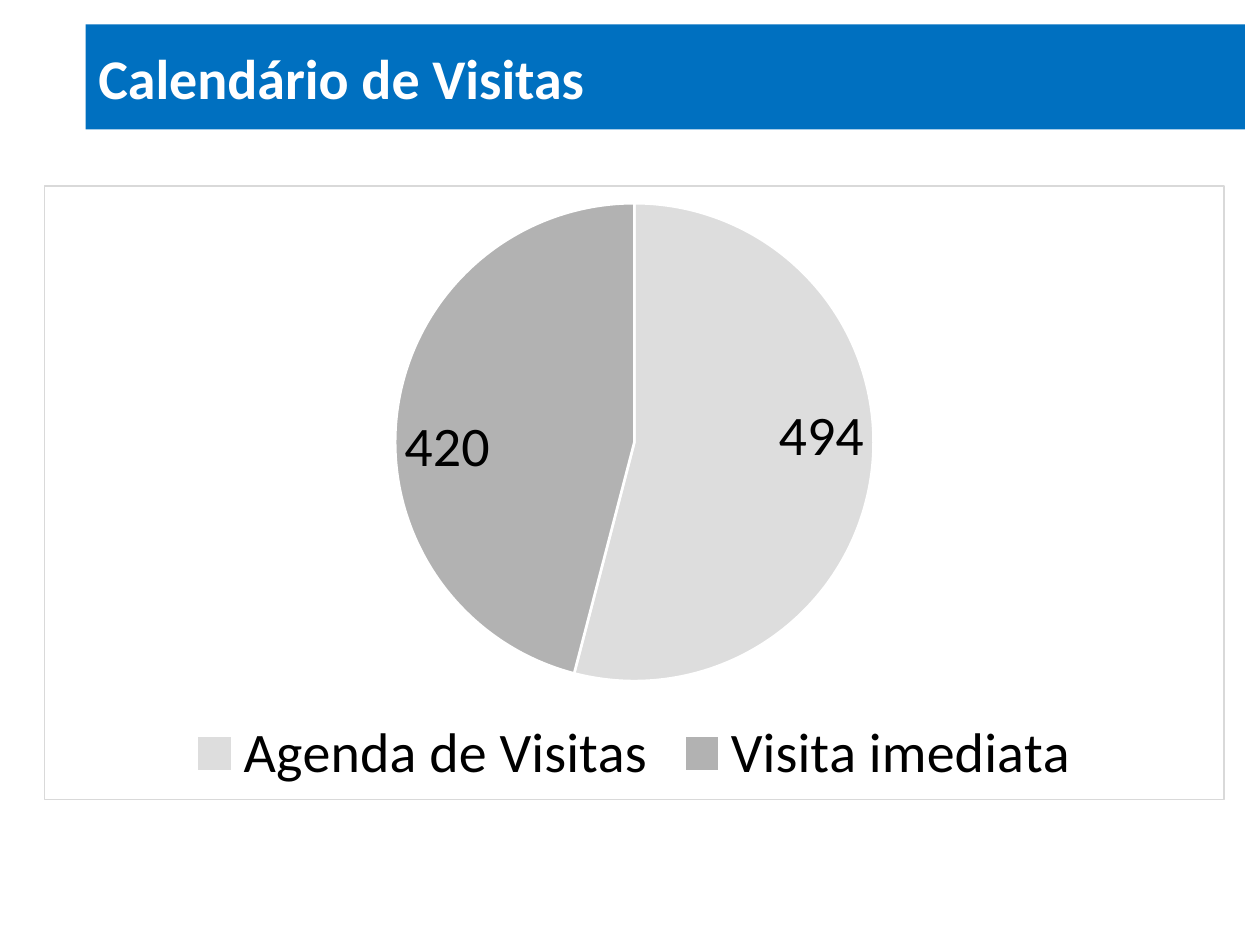
from lxml import etree
from pptx import Presentation
from pptx.chart.data import CategoryChartData
from pptx.dml.color import RGBColor
from pptx.enum.chart import XL_CHART_TYPE, XL_LABEL_POSITION, XL_LEGEND_POSITION
from pptx.enum.text import MSO_ANCHOR, MSO_AUTO_SIZE, PP_ALIGN
from pptx.oxml import parse_xml
from pptx.oxml.ns import nsdecls, qn
from pptx.util import Inches, Pt

PIE = XL_CHART_TYPE.PIE
INSIDE_END = XL_LABEL_POSITION.INSIDE_END
BOTTOM = XL_LEGEND_POSITION.BOTTOM
MIDDLE = MSO_ANCHOR.MIDDLE
GROW = MSO_AUTO_SIZE.SHAPE_TO_FIT_TEXT
LEFT = PP_ALIGN.LEFT

FONT = "Calibri"
SIZE = Pt(32)
TITLE_ONLY = 5
COLORS = {
    "banner": "0070C0",
    "white": "FFFFFF",
    "text": "000000",
    "frame": "D9D9D9",
    "scheduled": "DDDDDD",
    "immediate": "B2B2B2",
}
VISITS = [
    ("Agenda de Visitas", 494, "scheduled"),
    ("Visita imediata", 420, "immediate"),
]


def color(name):
    return RGBColor.from_string(COLORS[name])


def style_font(font, color_name, bold=False):
    font.name = FONT
    font.size = SIZE
    font.bold = bold
    font.color.rgb = color(color_name)


def add_banner(page, text, left, top, width, height):
    banner = page.shapes.title
    banner.left, banner.top = Inches(left), Inches(top)
    banner.width, banner.height = Inches(width), Inches(height)
    banner.fill.solid()
    banner.fill.fore_color.rgb = color("banner")
    frame = banner.text_frame
    frame.text = text
    frame.auto_size = GROW
    frame.vertical_anchor = MIDDLE
    para = frame.paragraphs[0]
    para.alignment = LEFT
    style_font(para.runs[0].font, "white", bold=True)


def frame_chart(chart):
    properties = parse_xml(f"<c:spPr {nsdecls('c', 'a')}/>")
    fill = etree.SubElement(properties, qn("a:solidFill"))
    etree.SubElement(fill, qn("a:srgbClr"), val=COLORS["white"])
    line = etree.SubElement(properties, qn("a:ln"), w=str(Pt(0.75)))
    line_fill = etree.SubElement(line, qn("a:solidFill"))
    etree.SubElement(line_fill, qn("a:srgbClr"), val=COLORS["frame"])
    chart.element.find(qn("c:chart")).addnext(properties)


def add_pie(page, slices, left, top, width, height):
    data = CategoryChartData()
    data.categories = [label for label, value, shade in slices]
    data.add_series("Series 1", [value for label, value, shade in slices])
    chart = page.shapes.add_chart(
        PIE, Inches(left), Inches(top), Inches(width), Inches(height), data
    ).chart
    style_font(chart.font, "text")
    chart.has_title = False
    chart.has_legend = True
    chart.legend.position = BOTTOM
    chart.legend.include_in_layout = False
    frame_chart(chart)

    plot = chart.plots[0]
    plot.vary_by_categories = True
    for index, (label, value, shade) in enumerate(slices):
        wedge = plot.series[0].points[index].format
        wedge.fill.solid()
        wedge.fill.fore_color.rgb = color(shade)
        wedge.line.color.rgb = color("white")
        wedge.line.width = Pt(1.5)
    plot.has_data_labels = True
    labels = plot.data_labels
    labels.show_value = True
    labels.show_percentage = False
    labels.position = INSIDE_END
    style_font(labels.font, "text")


def main():
    deck = Presentation()
    deck.slide_width, deck.slide_height = Inches(10), Inches(7.5)
    page = deck.slides.add_slide(deck.slide_layouts[TITLE_ONLY])
    add_banner(page, "Calendário de Visitas", 0.68, 0.29, 9.2, 0.64)
    add_pie(page, VISITS, 0.35, 1.47, 9.37, 4.88)
    deck.save("out.pptx")


if __name__ == "__main__":
    main()
